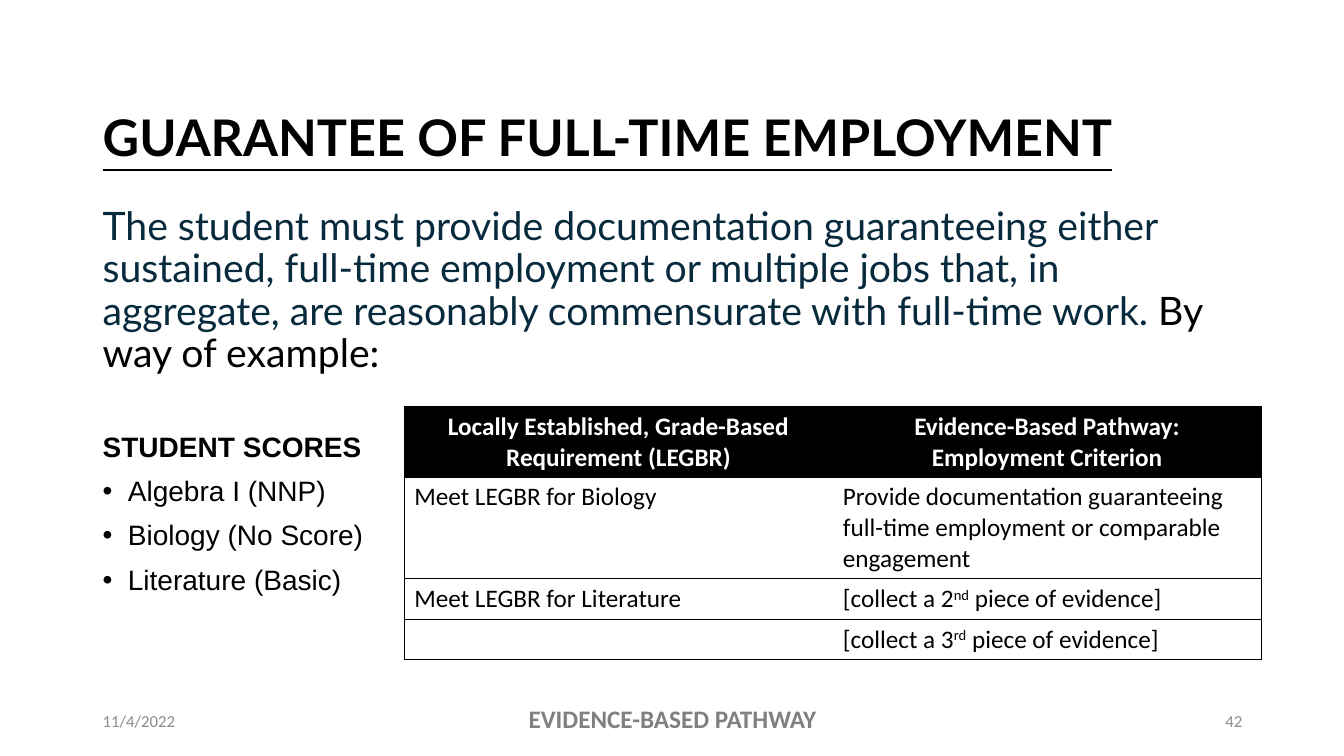
from lxml import etree
from pptx import Presentation
from pptx.dml.color import RGBColor
from pptx.enum.text import MSO_ANCHOR, PP_ALIGN
from pptx.oxml.ns import qn
from pptx.util import Inches, Pt

LEFT, CENTER, RIGHT = PP_ALIGN.LEFT, PP_ALIGN.CENTER, PP_ALIGN.RIGHT
TOP, MIDDLE = MSO_ANCHOR.TOP, MSO_ANCHOR.MIDDLE

COLORS = {
    "black": "000000",
    "white": "FFFFFF",
    "navy": "082A3D",
    "gray": "808080",
    "light gray": "8C8C8C",
}
TITLE = {"name": "Lato", "size": Pt(36), "bold": True, "underline": True}
LEAD = {"name": "Lato", "size": Pt(28)}
SCORES = {"name": "Arial", "size": Pt(20)}
CELL = {"name": "Calibri", "size": Pt(18)}
STRONG_CELL = {**CELL, "bold": True}
SMALL = {"name": "Calibri", "size": Pt(12)}

MARGIN, CONTENT_WIDTH = 0.92, 11.5
BODY_SPACING = {"line_spacing": 0.9, "space_before": Pt(10)}

HEADERS = [
    ["Locally Established, Grade-Based Requirement (LEGBR)"],
    ["Evidence-Based Pathway:", "Employment Criterion"],
]
# Each cell is a list of runs; every second run is superscript
CRITERIA = [
    (["Meet LEGBR for Biology"],
     ["Provide documentation guaranteeing full-time employment or comparable engagement"]),
    (["Meet LEGBR for Literature"], ["[collect a 2", "nd", " piece of evidence]"]),
    ([], ["[collect a 3", "rd", " piece of evidence]"]),
]
ROW_HEIGHTS = [0.7, 1.01, 0.4, 0.4]
COLUMN_WIDTH = 4.25


def set_values(target, values):
    for key, value in values.items():
        setattr(target, key, value)


def add_run(paragraph, text, style, color):
    run = paragraph.add_run()
    run.text = text
    set_values(run.font, style)
    run.font.color.rgb = RGBColor.from_string(COLORS[color])
    return run


def add_text_frame(slide, left, top, width, height, anchor=TOP):
    box = slide.shapes.add_textbox(Inches(left), Inches(top), Inches(width), Inches(height))
    set_values(box.text_frame, {"word_wrap": True, "vertical_anchor": anchor})
    return box.text_frame


def add_line(slide, text, place, style, color, align=LEFT, anchor=MIDDLE):
    frame = add_text_frame(slide, *place, anchor)
    paragraph = frame.paragraphs[0]
    paragraph.alignment = align
    add_run(paragraph, text, style, color)
    return frame


def add_bullet(paragraph):
    properties = paragraph._p.get_or_add_pPr()
    properties.set("marL", str(Inches(0.25)))
    properties.set("indent", str(-Inches(0.25)))
    etree.SubElement(properties, qn("a:buFont")).set("typeface", "Arial")
    etree.SubElement(properties, qn("a:buChar")).set("char", "•")


def add_body(slide):
    frame = add_text_frame(slide, MARGIN, 2, CONTENT_WIDTH, 4.76)
    lead = frame.paragraphs[0]
    lead.line_spacing = 0.9
    add_run(lead, "The student must provide documentation guaranteeing either sustained, "
            "full-time employment or multiple jobs that, in aggregate, are reasonably "
            "commensurate with full-time work. ", LEAD, "navy")
    add_run(lead, "By way of example:", LEAD, "black")

    # Student scores
    heading = frame.add_paragraph()
    set_values(heading, {"line_spacing": 0.9, "space_before": Pt(41)})
    add_run(heading, "STUDENT SCORES", {**SCORES, "bold": True}, "black")
    for score in ("Algebra I (NNP)", "Biology (No Score)", "Literature (Basic)"):
        item = frame.add_paragraph()
        add_bullet(item)
        set_values(item, BODY_SPACING)
        add_run(item, score, SCORES, "black")


def set_borders(cell, visible):
    properties = cell._tc.get_or_add_tcPr()
    for position, side in enumerate("LRTB"):
        border = etree.Element(qn(f"a:ln{side}"), w=str(Pt(0.5)))
        if side in visible:
            fill = etree.SubElement(border, qn("a:solidFill"))
            etree.SubElement(fill, qn("a:srgbClr")).set("val", COLORS["black"])
        else:
            etree.SubElement(border, qn("a:noFill"))
        properties.insert(position, border)


def fill_cell(cell, color, column):
    cell.fill.solid()
    cell.fill.fore_color.rgb = RGBColor.from_string(COLORS[color])
    set_borders(cell, "LTB" if column == 0 else "RTB")


def add_criteria_table(slide):
    frame = slide.shapes.add_table(
        len(ROW_HEIGHTS), len(HEADERS), Inches(4.01), Inches(4.03),
        Inches(COLUMN_WIDTH * len(HEADERS)), Inches(sum(ROW_HEIGHTS)))
    table = frame.table
    for row, height in zip(table.rows, ROW_HEIGHTS):
        row.height = Inches(height)

    # Header row
    for column, lines in enumerate(HEADERS):
        table.columns[column].width = Inches(COLUMN_WIDTH)
        cell = table.cell(0, column)
        fill_cell(cell, "black", column)
        cell.vertical_anchor = MIDDLE
        for number, line in enumerate(lines):
            text = cell.text_frame
            paragraph = text.add_paragraph() if number else text.paragraphs[0]
            paragraph.alignment = CENTER
            add_run(paragraph, line, STRONG_CELL, "white")

    # Criteria rows
    for row, criteria in enumerate(CRITERIA, start=1):
        for column, parts in enumerate(criteria):
            cell = table.cell(row, column)
            fill_cell(cell, "white", column)
            paragraph = cell.text_frame.paragraphs[0]
            set_values(paragraph.font, CELL)
            for number, part in enumerate(parts):
                run = add_run(paragraph, part, CELL, "black")
                if number % 2:
                    run._r.get_or_add_rPr().set("baseline", "30000")


def main():
    presentation = Presentation()
    presentation.slide_width = Inches(13.33)
    presentation.slide_height = Inches(7.5)
    slide = presentation.slides.add_slide(presentation.slide_layouts[6])

    # Title, set low in its box
    title = add_line(slide, "GUARANTEE OF FULL-TIME EMPLOYMENT",
                     (MARGIN, 0.4, CONTENT_WIDTH, 1.45), TITLE, "black")
    title.margin_top = Inches(0.59)
    title.paragraphs[0].line_spacing = 0.9

    add_body(slide)
    add_criteria_table(slide)

    # Footer
    add_line(slide, "EVIDENCE-BASED PATHWAY", (MARGIN, 6.93, CONTENT_WIDTH, 0.4),
             STRONG_CELL, "gray", CENTER, TOP)
    add_line(slide, "11/4/2022", (MARGIN, 6.95, 3, 0.4), SMALL, "light gray")
    add_line(slide, "42", (9.42, 6.95, 3, 0.4), SMALL, "light gray", RIGHT)

    presentation.save("out.pptx")


if __name__ == "__main__":
    main()
